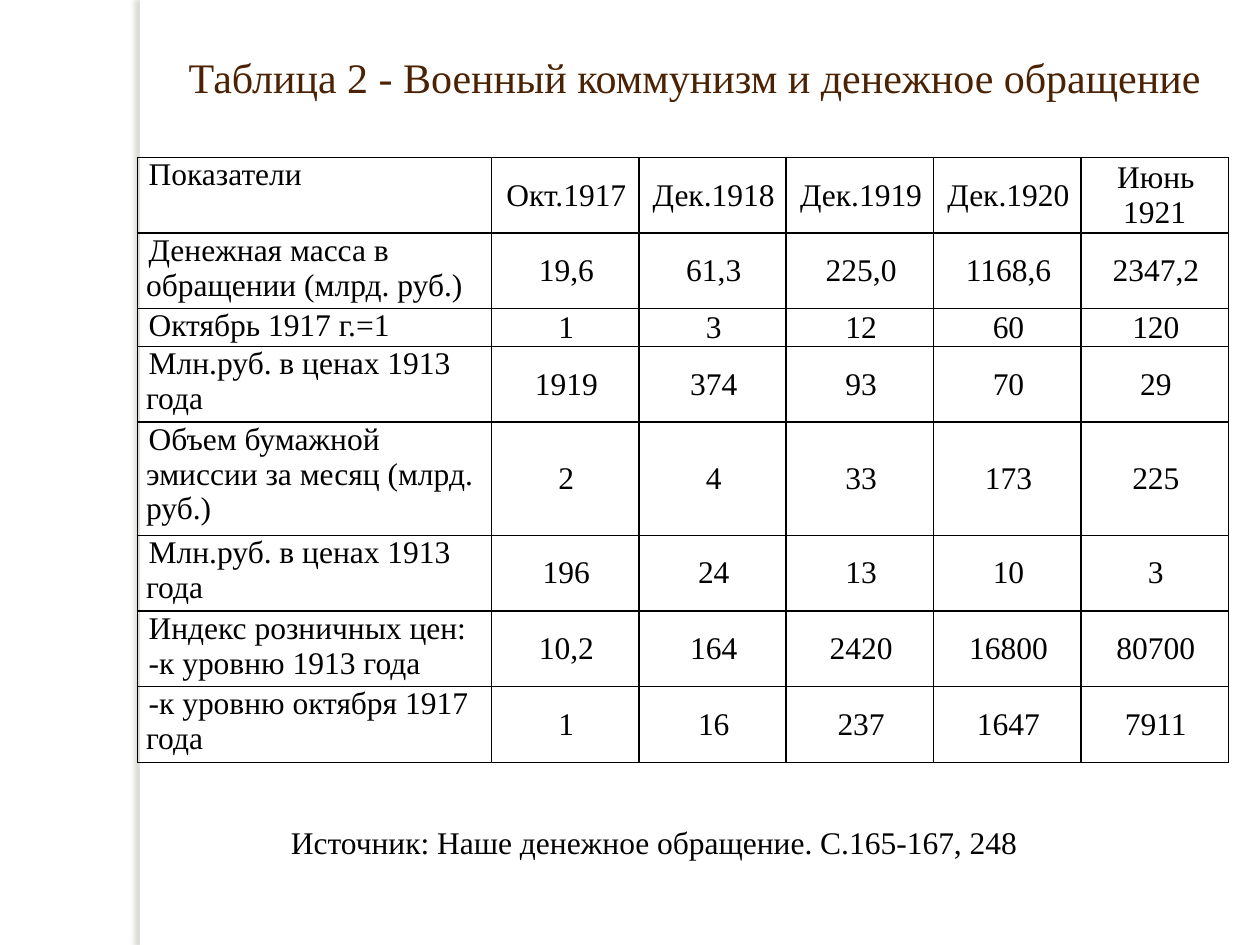
"""Builds a slide with a table on money circulation under War Communism."""
import pptx
import pptx.dml.color
import pptx.enum.shapes
import pptx.enum.text
import pptx.oxml
import pptx.oxml.ns
import pptx.util
from pptx.util import Inches

COLORS = {"paper": "FFFFFF", "ink": "000000", "title": "4B2203", "shadow": "736F63"}
FONT = "Times New Roman"
ALIGN = pptx.enum.text.PP_ALIGN
ANCHOR = pptx.enum.text.MSO_ANCHOR
AUTO_SIZE = pptx.enum.text.MSO_AUTO_SIZE
NAMESPACE = pptx.oxml.ns.nsdecls("a")

INDICATORS = [
    ("Показатели", "Окт.1917", "Дек.1918", "Дек.1919", "Дек.1920", "Июнь 1921"),
    ("Денежная масса в обращении (млрд. руб.)", "19,6", "61,3", "225,0", "1168,6", "2347,2"),
    ("Октябрь 1917 г.=1", "1", "3", "12", "60", "120"),
    ("Млн.руб. в ценах 1913 года", "1919", "374", "93", "70", "29"),
    ("Объем бумажной эмиссии за месяц (млрд. руб.)", "2", "4", "33", "173", "225"),
    ("Млн.руб. в ценах 1913 года", "196", "24", "13", "10", "3"),
    ("Индекс розничных цен:\n-к уровню 1913 года", "10,2", "164", "2420", "16800", "80700"),
    ("-к уровню октября 1917 года", "1", "16", "237", "1647", "7911"),
]
LINES_PER_ROW = [2, 2, 1, 2, 3, 2, 2, 2]
LINE_HEIGHT = 0.3
COLUMN_WIDTHS = [2.81] + [1.17] * 5


def rgb(name):
    """Return the named colour."""
    return pptx.dml.color.RGBColor.from_string(COLORS[name])


def write(frame, text, size, color, indent, align=ALIGN.LEFT):
    """Write each line of text as a paragraph with a first-line indent."""
    for number, line in enumerate(text.split("\n")):
        paragraph = frame.add_paragraph() if number else frame.paragraphs[0]
        paragraph.alignment = align
        paragraph._p.get_or_add_pPr().set("indent", str(Inches(indent)))
        run = paragraph.add_run()
        run.text = line
        run.font.name = FONT
        run.font.size = pptx.util.Pt(size)
        run.font.color.rgb = rgb(color)


def add_side_strip(slide):
    """Add the white strip that casts a soft shadow to the left."""
    strip = slide.shapes.add_shape(
        pptx.enum.shapes.MSO_SHAPE.RECTANGLE, Inches(1.11), 0, Inches(0.08), Inches(7.5))
    strip.fill.solid()
    strip.fill.fore_color.rgb = rgb("paper")
    strip.line.fill.background()
    strip._element.spPr.append(pptx.oxml.parse_xml(
        f'<a:effectLst {NAMESPACE}><a:outerShdw blurRad="38100" dist="38100" dir="10800000">'
        f'<a:srgbClr val="{COLORS["shadow"]}"><a:alpha val="25000"/></a:srgbClr>'
        '</a:outerShdw></a:effectLst>'))


def set_title(slide):
    """Place and write the slide title."""
    title = slide.shapes.title
    title.left, title.top = Inches(0.86), Inches(0.31)
    title.width, title.height = Inches(8.82), Inches(0.91)
    frame = title.text_frame
    frame.auto_size = AUTO_SIZE.NONE
    frame.word_wrap = False
    frame.vertical_anchor = ANCHOR.TOP
    frame.margin_top = Inches(0.1)
    write(frame, "Таблица 2 - Военный коммунизм и денежное обращение",
          24, "title", 0.49, ALIGN.CENTER)


def outline(cell):
    """Draw black borders on all sides of a cell."""
    properties = cell._tc.get_or_add_tcPr()
    for position, side in enumerate(("lnL", "lnR", "lnT", "lnB")):
        properties.insert(position, pptx.oxml.parse_xml(
            f'<a:{side} {NAMESPACE} w="12700"><a:solidFill>'
            f'<a:srgbClr val="{COLORS["ink"]}"/></a:solidFill></a:{side}>'))


def add_indicators(slide):
    """Add the table of indicators by date."""
    table = slide.shapes.add_table(
        len(INDICATORS), len(COLUMN_WIDTHS), Inches(1.09), Inches(1.25),
        Inches(sum(COLUMN_WIDTHS)), Inches(LINE_HEIGHT * sum(LINES_PER_ROW))).table
    table.first_row = table.horz_banding = False
    for column, width in zip(table.columns, COLUMN_WIDTHS):
        column.width = Inches(width)
    for row, lines, texts in zip(table.rows, LINES_PER_ROW, INDICATORS):
        row.height = Inches(LINE_HEIGHT * lines)
        for number, (cell, text) in enumerate(zip(row.cells, texts)):
            cell.fill.background()
            cell.margin_left = cell.margin_right = Inches(0.07)
            cell.margin_top = cell.margin_bottom = 0
            cell.vertical_anchor = ANCHOR.MIDDLE if number else ANCHOR.TOP
            write(cell.text_frame, text, 18, "ink", 0.02,
                  ALIGN.CENTER if number else ALIGN.LEFT)
            outline(cell)


def add_source(slide):
    """Add the source line below the table."""
    frame = slide.shapes.add_textbox(
        Inches(1.72), Inches(6.48), Inches(7.03), Inches(0.4)).text_frame
    frame.word_wrap = True
    frame.auto_size = AUTO_SIZE.SHAPE_TO_FIT_TEXT
    write(frame, "Источник: Наше денежное обращение. С.165-167, 248", 18, "ink", 0.49)


def main():
    """Build and save the slide."""
    deck = pptx.Presentation()
    deck.slide_width, deck.slide_height = Inches(10), Inches(7.5)
    slide = deck.slides.add_slide(deck.slide_layouts[5])
    slide.background.fill.solid()
    slide.background.fill.fore_color.rgb = rgb("paper")
    add_side_strip(slide)
    set_title(slide)
    add_indicators(slide)
    add_source(slide)
    deck.save("out.pptx")


if __name__ == "__main__":
    main()
